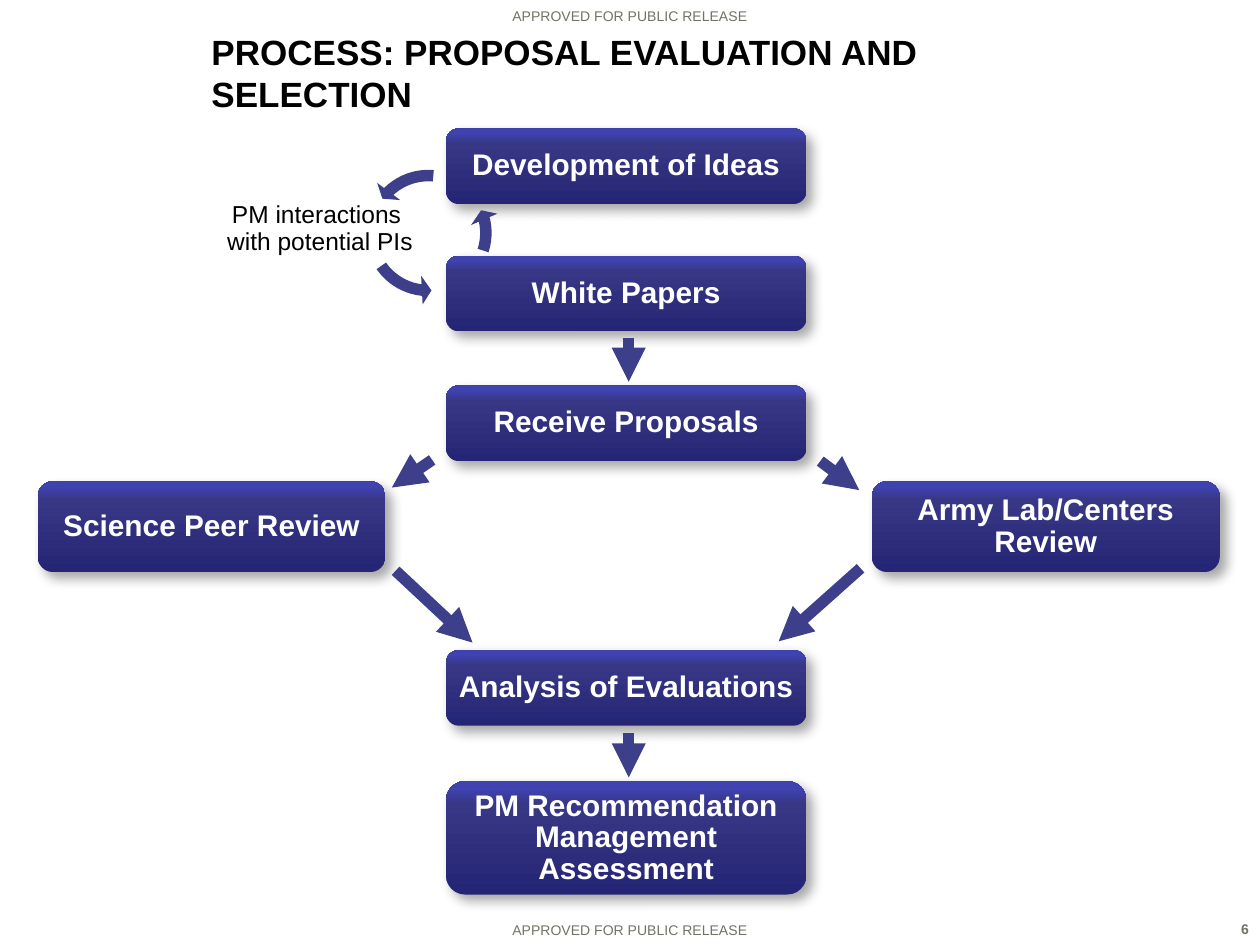
from pptx import Presentation
from pptx.dml.color import RGBColor
from pptx.enum import shapes, text
from pptx.oxml import parse_xml
from pptx.oxml.ns import nsdecls
from pptx.util import Inches, Pt

FONT = "Arial"
BLACK = RGBColor(0x00, 0x00, 0x00)
WHITE = RGBColor(0xFF, 0xFF, 0xFF)
GREY = RGBColor(0x71, 0x73, 0x65)
ARROW = RGBColor(0x3D, 0x3F, 0x8B)
BOX_STOPS = [
    (0, RGBColor(0x25, 0x25, 0x75)),
    (80, RGBColor(0x37, 0x37, 0x85)),
    (93, RGBColor(0x3F, 0x42, 0xAF)),
]

CENTER_LEFT, CENTER_WIDTH, STEP_HEIGHT = 3.54, 2.86, 0.6
REVIEW_TOP, REVIEW_WIDTH, REVIEW_HEIGHT = 3.82, 2.76, 0.72
MARKING = "APPROVED FOR PUBLIC RELEASE"

# left, top, width, height, label, line spacing
STEPS = [
    (CENTER_LEFT, 1.02, CENTER_WIDTH, STEP_HEIGHT, "Development of Ideas", 0.9),
    (CENTER_LEFT, 2.03, CENTER_WIDTH, STEP_HEIGHT, "White Papers", 0.9),
    (CENTER_LEFT, 3.06, CENTER_WIDTH, STEP_HEIGHT, "Receive Proposals", 0.9),
    (0.3, REVIEW_TOP, REVIEW_WIDTH, REVIEW_HEIGHT, "Science Peer Review", 0.9),
    (6.92, REVIEW_TOP, REVIEW_WIDTH, REVIEW_HEIGHT, "Army Lab/Centers Review", 0.9),
    (CENTER_LEFT, 5.16, CENTER_WIDTH, STEP_HEIGHT, "Analysis of Evaluations", 0.9),
    (CENTER_LEFT, 6.2, CENTER_WIDTH, 0.9,
     "PM Recommendation Management Assessment", Pt(18)),
]

# start x, start y, end x, end y
FLOWS = [
    (4.99, 2.68, 4.99, 3.03),
    (4.99, 5.82, 4.99, 6.17),
    (3.43, 3.65, 3.11, 3.87),
    (6.51, 3.66, 6.82, 3.89),
    (3.14, 4.53, 3.75, 5.1),
    (6.83, 4.51, 6.18, 5.09),
]

# rotation, then the two angle adjustments of each arc in the cycle
CYCLE_ARCS = [
    (95.7, 78.36, 107.49),
    (86.1, 6.27, 35.4),
    (87.2, 155.43, 174.33),
]


def write(shape, words, size, color, bold=False,
          align=text.PP_ALIGN.CENTER, anchor=text.MSO_ANCHOR.MIDDLE, spacing=None):
    frame = shape.text_frame
    frame.word_wrap = True
    frame.vertical_anchor = anchor
    frame.text = words
    paragraph = frame.paragraphs[0]
    paragraph.alignment = align
    if spacing is not None:
        paragraph.line_spacing = spacing
    for run in paragraph.runs:
        run.font.name = FONT
        run.font.size = Pt(size)
        run.font.bold = bold
        run.font.color.rgb = color


def add_label(slide, left, top, width, height, words, size, color, **style):
    box = slide.shapes.add_textbox(
        Inches(left), Inches(top), Inches(width), Inches(height))
    write(box, words, size, color, **style)


def apply_box_effects(shape):
    """Bottom-to-top gradient and a soft shadow to the lower right."""
    stops = "".join(
        f'<a:gs pos="{position * 1000}"><a:srgbClr val="{color}"/></a:gs>'
        for position, color in BOX_STOPS)
    gradient = parse_xml(
        f'<a:gradFill {nsdecls("a")} rotWithShape="1"><a:gsLst>{stops}</a:gsLst>'
        '<a:lin ang="16200000" scaled="0"/></a:gradFill>')
    shadow = parse_xml(
        f'<a:effectLst {nsdecls("a")}><a:outerShdw blurRad="{Pt(7)}" '
        f'dist="{Pt(5)}" dir="2700000" algn="tl" rotWithShape="0">'
        '<a:srgbClr val="000000"><a:alpha val="35000"/></a:srgbClr>'
        '</a:outerShdw></a:effectLst>')
    properties = shape.element.spPr
    shape.line.fill.background()
    properties.insert(2, gradient)
    properties.append(shadow)


def add_step(slide, left, top, width, height, words, spacing):
    shape = slide.shapes.add_shape(
        shapes.MSO_SHAPE.ROUNDED_RECTANGLE,
        Inches(left), Inches(top), Inches(width), Inches(height))
    apply_box_effects(shape)
    frame = shape.text_frame
    frame.margin_left = frame.margin_right = Inches(0.05)
    frame.margin_top = frame.margin_bottom = Inches(0.01)
    write(shape, words, 17, WHITE, bold=True, spacing=spacing)


def add_flow(slide, start_x, start_y, end_x, end_y):
    connector = slide.shapes.add_connector(
        shapes.MSO_CONNECTOR.STRAIGHT,
        Inches(start_x), Inches(start_y), Inches(end_x), Inches(end_y))
    connector.line.color.rgb = ARROW
    connector.line.width = Pt(6.5)
    connector.line._get_or_add_ln().append(
        parse_xml(f'<a:tailEnd {nsdecls("a")} type="triangle"/>'))
    connector._element.spPr.append(parse_xml(f'<a:effectLst {nsdecls("a")}/>'))


def add_cycle_arc(slide, rotation, first_angle, second_angle):
    arc = slide.shapes.add_shape(
        shapes.MSO_SHAPE.LEFT_CIRCULAR_ARROW,
        Inches(2.83), Inches(1.28), Inches(1.14), Inches(1.14))
    for index, value in enumerate((0.08, 5.76, first_angle, second_angle, 0.1)):
        arc.adjustments[index] = value
    arc.rotation = rotation
    arc.shadow.inherit = False
    arc.fill.solid()
    arc.fill.fore_color.rgb = ARROW
    arc.line.fill.background()


def main():
    presentation = Presentation()
    presentation.slide_width = Inches(10)
    presentation.slide_height = Inches(7.5)
    slide = presentation.slides.add_slide(presentation.slide_layouts[6])

    bottom, top = text.MSO_ANCHOR.BOTTOM, text.MSO_ANCHOR.TOP
    add_label(slide, 1.5, 7.26, 7, 0.24, MARKING, 8, GREY, anchor=bottom)
    add_label(slide, 0, 0, 10, 0.24, MARKING, 8, GREY, anchor=bottom)
    add_label(slide, 9.55, 7.26, 0.46, 0.24, "6", 8, GREY, bold=True,
              align=text.PP_ALIGN.RIGHT, anchor=top)
    add_label(slide, 1.58, 0.3, 6.5, 0.55,
              "PROCESS: PROPOSAL EVALUATION AND SELECTION", 20, BLACK,
              bold=True, align=text.PP_ALIGN.LEFT)

    for step in STEPS:
        add_step(slide, *step)
    for flow in FLOWS:
        add_flow(slide, *flow)
    add_label(slide, 1.55, 1.56, 1.98, 0.53,
              "PM interactions \vwith potential PIs", 14, BLACK,
              anchor=top, spacing=0.9)
    for arc in CYCLE_ARCS:
        add_cycle_arc(slide, *arc)

    presentation.save("out.pptx")


if __name__ == "__main__":
    main()
